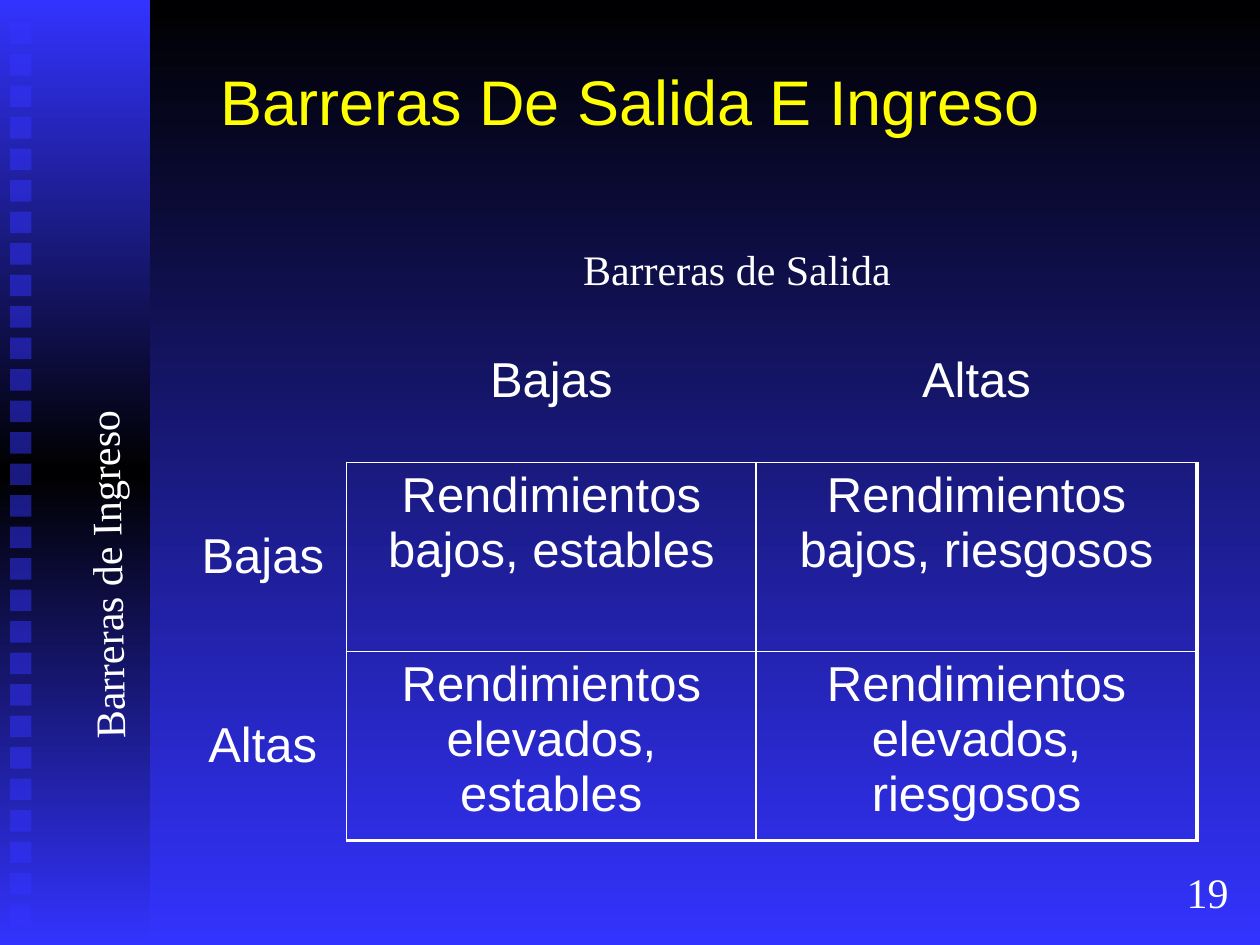
from dataclasses import dataclass

from lxml import etree
from copy import deepcopy
from pptx import Presentation
from pptx.dml.color import RGBColor
from pptx.enum.shapes import MSO_SHAPE
from pptx.enum.text import MSO_ANCHOR, PP_ALIGN
from pptx.oxml.ns import qn
from pptx.util import Inches, Pt

RECTANGLE = MSO_SHAPE.RECTANGLE
CENTER = PP_ALIGN.CENTER
TOP, MIDDLE = MSO_ANCHOR.TOP, MSO_ANCHOR.MIDDLE


@dataclass(frozen=True)
class Theme:
    blue: str = "3333FF"
    black: str = "000000"
    white: str = "FFFFFF"
    yellow: str = "FFFF00"
    sans: str = "Arial"
    serif: str = "Times New Roman"
    title_size: int = 36
    cell_size: int = 28
    label_size: int = 24
    thin: float = 1
    thick: float = 2.25


THEME = Theme()

MATRIX = [
    ["", "Bajas", "Altas"],
    ["Bajas", "Rendimientos bajos, estables", "Rendimientos bajos, riesgosos"],
    ["Altas", "Rendimientos elevados, estables", "Rendimientos elevados, riesgosos"],
]


def inches(box):
    return [Inches(length) for length in box]


def write(paragraph, text, font, size, color):
    run = paragraph.add_run()
    run.text = text
    run.font.name = font
    run.font.size = Pt(size)
    run.font.color.rgb = RGBColor.from_string(color)


def fill_vertical_gradient(fill, colors):
    fill.gradient()
    fill.gradient_angle = 270
    first = fill.gradient_stops[0]
    stop_list = first._gs.getparent()
    for _ in colors[2:]:
        stop_list.insert(1, deepcopy(first._gs))
    for index, (stop, color) in enumerate(zip(fill.gradient_stops, colors)):
        stop.color.rgb = RGBColor.from_string(color)
        stop.position = index / (len(colors) - 1)


def add_block(slide, box):
    block = slide.shapes.add_shape(RECTANGLE, *inches(box))
    block.shadow.inherit = False
    block.line.fill.background()
    return block


def add_side_band(slide, box):
    left, top, _, _ = box
    band = add_block(slide, box)
    fill_vertical_gradient(band.fill, [THEME.blue, THEME.black, THEME.blue])
    side, pitch, count = 0.17, 0.25, 29
    for index in range(count):
        square = add_block(slide, (left + 0.08, top + 0.18 + index * pitch, side, side))
        square.fill.solid()
        square.fill.fore_color.rgb = RGBColor.from_string(THEME.blue)
        color = square.fill._xPr.find(qn("a:solidFill"))[0]
        etree.SubElement(color, qn("a:alpha"), val="50000")


def add_title(slide, box, text):
    title = slide.shapes.title
    title.left, title.top, title.width, title.height = inches(box)
    title.text_frame.vertical_anchor = MIDDLE
    heading = title.text_frame.paragraphs[0]
    heading.alignment = CENTER
    write(heading, text, THEME.sans, THEME.title_size, THEME.yellow)


def add_label(slide, box, text, rotation=0):
    label = slide.shapes.add_textbox(*inches(box))
    label.rotation = rotation
    label.text_frame.word_wrap = False
    write(label.text_frame.paragraphs[0], text, THEME.serif, THEME.label_size, THEME.white)


def border_widths(row, column, last_row, last_column):
    if row and column:
        return {
            "L": THEME.thin,
            "R": THEME.thick if column == last_column else THEME.thin,
            "T": THEME.thin,
            "B": THEME.thick if row == last_row else THEME.thin,
        }
    return {"R": THEME.thin if row else 0, "B": THEME.thin if column else 0}


def set_borders(cell, widths):
    properties = cell._tc.get_or_add_tcPr()
    for side in "LRTB":
        width = widths.get(side, 0)
        line = etree.SubElement(properties, qn(f"a:ln{side}"), w=str(Pt(width)))
        if width:
            paint = etree.SubElement(line, qn("a:solidFill"))
            etree.SubElement(paint, qn("a:srgbClr"), val=THEME.white)
        else:
            etree.SubElement(line, qn("a:noFill"))


def add_matrix(slide, box, rows):
    last_row, last_column = len(rows) - 1, len(rows[0]) - 1
    matrix = slide.shapes.add_table(len(rows), len(rows[0]), *inches(box)).table
    matrix.first_row = False
    matrix.horz_banding = False
    width, height = box[2:]
    for column, share in zip(matrix.columns, (1.33, 3.25, 3.5)):
        column.width = Inches(width * share / 8.08)
    for row, share in zip(matrix.rows, (0.92, 1.5, 1.5)):
        row.height = Inches(height * share / 3.92)
    for r, texts in enumerate(rows):
        for c, text in enumerate(texts):
            cell = matrix.cell(r, c)
            set_borders(cell, border_widths(r, c, last_row, last_column))
            cell.fill.background()
            cell.vertical_anchor = TOP if c else MIDDLE
            if text:
                entry = cell.text_frame.paragraphs[0]
                entry.alignment = CENTER
                write(entry, text, THEME.sans, THEME.cell_size, THEME.white)


def main():
    deck = Presentation()
    deck.slide_width, deck.slide_height = Inches(10), Inches(7.5)
    slide = deck.slides.add_slide(deck.slide_layouts[5])
    fill_vertical_gradient(slide.background.fill, [THEME.black, THEME.blue])
    add_side_band(slide, (0, 0, 1.19, 7.5))
    add_title(slide, (0.75, 0.17, 8.5, 1.25), "Barreras De Salida E Ingreso")
    add_label(slide, (9.32, 6.83, 0.57, 0.5), "19")
    add_matrix(slide, (1.42, 2.75, 8.08, 3.92), MATRIX)
    add_label(slide, (4.53, 1.88, 2.97, 0.5), "Barreras de Salida")
    add_label(slide, (-0.74, 4.14, 3.15, 0.5), "Barreras de Ingreso", 268.9)
    deck.save("out.pptx")


if __name__ == "__main__":
    main()
